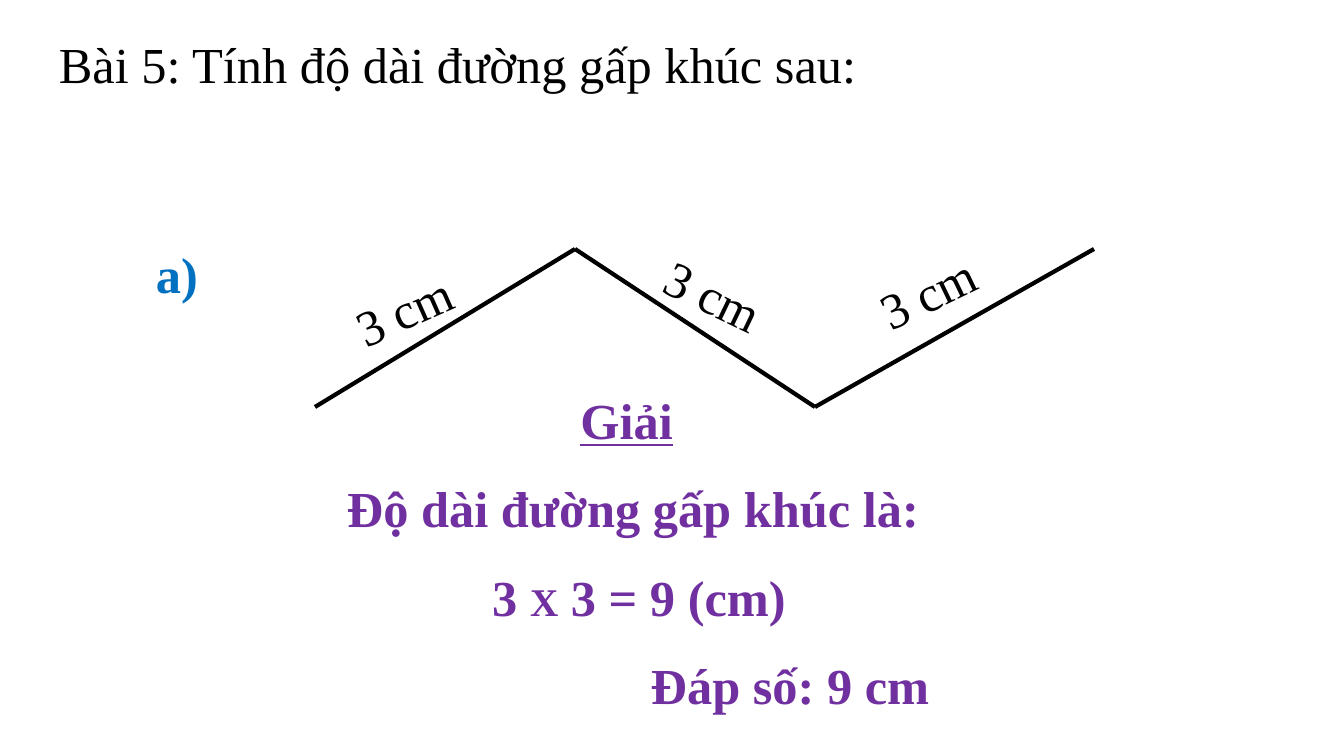
from itertools import pairwise

from lxml import etree
from pptx import Presentation
from pptx import util as u
from pptx.dml.color import RGBColor
from pptx.enum import shapes, text
from pptx.oxml.ns import qn

PX = 914400 / 100.8
FONT = "Times New Roman"
COLORS = {"black": "000000", "red": "FF0000", "purple": "7030A0", "blue": "0070C0"}


def px(length):
    return u.Emu(round(length * PX))


def add_segment(slide, start, end):
    segment = slide.shapes.add_connector(
        shapes.MSO_CONNECTOR.STRAIGHT, *map(px, (*start, *end))
    )
    segment.line.width = u.Pt(3)
    segment.line.color.rgb = RGBColor.from_string(COLORS["black"])
    etree.SubElement(segment._element.spPr, qn("a:effectLst"))


def format_run(run, color, bold=False, size=36):
    run.font.name = FONT
    run.font.size = u.Pt(size)
    run.font.bold = bold
    run.font.color.rgb = RGBColor.from_string(COLORS[color])


def add_text_box(slide, left, top, width, height, wrap=True):
    box = slide.shapes.add_textbox(*map(px, (left, top, width, height)))
    box.text_frame.word_wrap = wrap
    box.text_frame.vertical_anchor = text.MSO_ANCHOR.TOP
    return box


def add_label(slide, wording, box, color="black", bold=False, rotation=0, wrap=False):
    label = add_text_box(slide, *box, wrap=wrap)
    label.rotation = rotation
    label.text_frame.text = wording
    format_run(label.text_frame.paragraphs[0].runs[0], color, bold)


def add_solution(slide):
    frame = add_text_box(slide, 49, 384, 1168, 346).text_frame
    frame.text = "Giải\nĐộ dài đường gấp khúc là:\n3 \nĐáp số: 9 cm"
    heading, statement, calculation, answer = frame.paragraphs
    heading.add_run().text = " "
    for wording in ("X", " 3 = 9 (cm)"):
        calculation.add_run().text = wording
    for paragraph in frame.paragraphs:
        paragraph.alignment = text.PP_ALIGN.CENTER
        color = "red" if paragraph is heading else "purple"
        for run in paragraph.runs:
            format_run(run, color, True, 28 if run.text == "X" else 36)
    for paragraph in (statement, calculation, answer):
        paragraph.space_before = u.Pt(20)
    heading.runs[0].font.underline = True
    for paragraph, indent in ((calculation, 12), (answer, 314)):
        paragraph._p.get_or_add_pPr().set("marL", str(px(indent)))


def main():
    presentation = Presentation()
    presentation.slide_width = px(1344)
    presentation.slide_height = px(756)
    slide = presentation.slides.add_slide(presentation.slide_layouts[6])

    corners = [(315, 407), (575, 249), (815, 407), (1094, 249)]
    for start, end in pairwise(corners):
        add_segment(slide, start, end)
    for left, top, rotation in ((344, 274, 336), (654, 260, 25.6), (868, 256, 334.2)):
        add_label(slide, "3 cm", (left, top, 121, 72), rotation=rotation)

    add_solution(slide)
    add_label(slide, "a)", (146, 238, 62, 72), "blue", bold=True)
    add_label(slide, "Bài 5: Tính độ dài đường gấp khúc sau:", (49, 28, 1046, 72), wrap=True)
    presentation.save("out.pptx")


if __name__ == "__main__":
    main()
